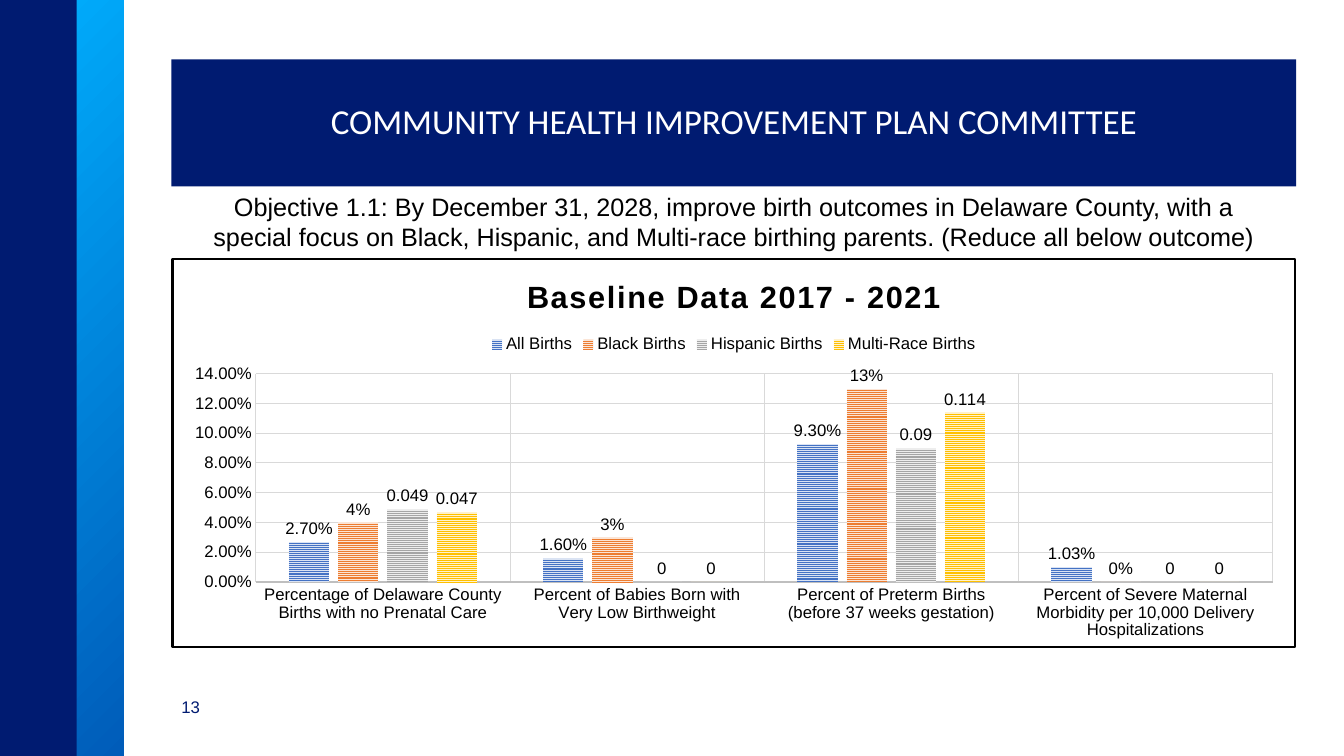
import pptx
import pptx.chart.data
import pptx.dml.color
import pptx.enum.chart
import pptx.enum.dml
import pptx.enum.shapes
import pptx.enum.text
import pptx.oxml
import pptx.util

Pt = pptx.util.Pt
RGB = pptx.dml.color.RGBColor.from_string

TITLE = "COMMUNITY HEALTH IMPROVEMENT PLAN COMMITTEE"
OBJECTIVE = ("Objective 1.1: By December 31, 2028, improve birth outcomes in Delaware County, "
             "with a special focus on Black, Hispanic, and Multi-race birthing parents. "
             "(Reduce all below outcome)")
PAGE = "13"
CHART_TITLE = "Baseline Data 2017 - 2021"
MEASURES = [
    "Percentage of Delaware County Births with no Prenatal Care",
    "Percent of Babies Born with Very Low Birthweight",
    "Percent of Preterm Births (before 37 weeks gestation)",
    "Percent of Severe Maternal Morbidity per 10,000 Delivery Hospitalizations",
]
# name, values, label format, stripe colour, ground colour
GROUPS = [
    ("All Births", (0.027, 0.016, 0.093, 0.0103), "0.00%", "4472C4", "DAE3F3"),
    ("Black Births", (0.04, 0.03, 0.13, 0), "0%", "ED7D31", "FBE5D6"),
    ("Hispanic Births", (0.049, 0, 0.09, 0), "General", "A5A5A5", "EDEDED"),
    ("Multi-Race Births", (0.047, 0, 0.114, 0), "General", "FFC000", "FFF2CC"),
]
THEME = {
    "navy": "001B71", "blue": "005CB9", "sky": "00ACFC",
    "white": "FFFFFF", "black": "000000", "grid": "D9D9D9", "axis": "BFBFBF",
    "title_font": "Calibri", "body_font": "Arial",
    "title": 25, "chart_title": 22, "body": 18, "small": 12,
}

WIDTH, HEIGHT = 960, 540
LEFT, CONTENT_W = 122.4, 803.5
BAND_W, BAND_STEP = 54.7, 33.8
TITLE_TOP, TITLE_H = 42.5, 90.7
OBJECTIVE_INSET = 18.5
CHART_TOP, CHART_H = 184.3, 278.6


def box(left, top, width, height):
    return [Pt(v) for v in (left, top, width, height)]


def set_font(font, size, color="black", name="body_font", bold=False):
    font.size = Pt(THEME[size])
    font.color.rgb = RGB(THEME[color])
    font.name = THEME[name]
    font.bold = bold


def set_line(line, color, width):
    line.color.rgb = RGB(THEME[color])
    line.width = Pt(width)


def add_band(slide, left):
    sp = slide.shapes.add_shape(pptx.enum.shapes.MSO_SHAPE.RECTANGLE,
                                *box(left, 0, BAND_W, HEIGHT))
    sp.shadow.inherit = False
    sp.line.fill.background()
    return sp


def add_side_bands(slide):
    fill = add_band(slide, BAND_STEP).fill
    fill.gradient()
    fill.gradient_angle = 135
    for stop, color, position in zip(fill.gradient_stops, ("blue", "sky"), (0, 1)):
        stop.color.rgb = RGB(THEME[color])
        stop.position = position
    fill = add_band(slide, 0).fill
    fill.solid()
    fill.fore_color.rgb = RGB(THEME["navy"])


def add_title(slide):
    sp = slide.shapes.title
    sp.left, sp.top, sp.width, sp.height = box(LEFT, TITLE_TOP, CONTENT_W, TITLE_H)
    sp.fill.solid()
    sp.fill.fore_color.rgb = RGB(THEME["navy"])
    tf = sp.text_frame
    tf.text = TITLE
    tf.vertical_anchor = pptx.enum.text.MSO_ANCHOR.MIDDLE
    p = tf.paragraphs[0]
    p.alignment = pptx.enum.text.PP_ALIGN.CENTER
    p.line_spacing = 0.9
    set_font(p.font, "title", "white", "title_font")


def add_text(slide, area, text, size, color, align):
    tf = slide.shapes.add_textbox(*area).text_frame
    tf.word_wrap = True
    tf.text = text
    p = tf.paragraphs[0]
    p.alignment = align
    set_font(p.font, size, color)


def frame_chart(chart):
    """Give the chart area a white fill and a black border."""
    sp_pr = pptx.oxml.parse_xml(
        '<c:spPr xmlns:c="http://schemas.openxmlformats.org/drawingml/2006/chart" '
        'xmlns:a="http://schemas.openxmlformats.org/drawingml/2006/main">'
        f'<a:solidFill><a:srgbClr val="{THEME["white"]}"/></a:solidFill>'
        f'<a:ln w="{Pt(1.75)}"><a:solidFill><a:srgbClr val="{THEME["black"]}"/>'
        '</a:solidFill></a:ln></c:spPr>')
    chart.element.chart.addnext(sp_pr)


def add_chart(slide):
    xl = pptx.enum.chart
    data = pptx.chart.data.CategoryChartData()
    data.categories = MEASURES
    for name, values, fmt, _, _ in GROUPS:
        data.add_series(name, values, fmt)
    chart = slide.shapes.add_chart(xl.XL_CHART_TYPE.COLUMN_CLUSTERED,
                                   *box(LEFT, CHART_TOP, CONTENT_W, CHART_H), data).chart
    set_font(chart.font, "small")
    frame_chart(chart)

    chart.has_title = True
    tf = chart.chart_title.text_frame
    tf.text = CHART_TITLE
    r = tf.paragraphs[0].runs[0]
    set_font(r.font, "chart_title", bold=True)
    r.font._element.set("spc", "130")
    chart.has_legend = True
    chart.legend.position = xl.XL_LEGEND_POSITION.TOP
    chart.legend.include_in_layout = False
    set_font(chart.legend.font, "small")

    for axis in (chart.category_axis, chart.value_axis):
        axis.has_major_gridlines = True
        set_line(axis.major_gridlines.format.line, "grid", 0.75)
        axis.major_tick_mark = axis.minor_tick_mark = xl.XL_TICK_MARK.NONE
        set_font(axis.tick_labels.font, "small")
    set_line(chart.category_axis.format.line, "axis", 1.5)
    axis = chart.value_axis
    axis.format.line.fill.background()
    axis.minimum_scale, axis.maximum_scale, axis.major_unit = 0, 0.14, 0.02
    axis.tick_labels.number_format = "0.00%"
    axis.tick_labels.number_format_is_linked = False

    plot = chart.plots[0]
    plot.vary_by_categories = False
    plot.gap_width, plot.overlap = 164, -22
    for series, (_, _, fmt, stripe, ground) in zip(plot.series, GROUPS):
        fill = series.format.fill
        fill.patterned()
        fill.pattern = pptx.enum.dml.MSO_PATTERN.NARROW_HORIZONTAL
        fill.fore_color.rgb = RGB(stripe)
        fill.back_color.rgb = RGB(ground)
        labels = series.data_labels
        labels.show_value = True
        labels.position = xl.XL_LABEL_POSITION.OUTSIDE_END
        labels.number_format = fmt
        labels.number_format_is_linked = False
        set_font(labels.font, "small")


def main():
    prs = pptx.Presentation()
    prs.slide_width, prs.slide_height = Pt(WIDTH), Pt(HEIGHT)
    slide = prs.slides.add_slide(prs.slide_layouts[5])
    align = pptx.enum.text.PP_ALIGN
    add_side_bands(slide)
    add_title(slide)
    add_text(slide, box(LEFT, 494, 40, 29), PAGE, "small", "navy", align.LEFT)
    add_text(slide, box(LEFT + OBJECTIVE_INSET, TITLE_TOP + TITLE_H,
                        CONTENT_W - 2 * OBJECTIVE_INSET, 51),
             OBJECTIVE, "body", "black", align.CENTER)
    add_chart(slide)
    prs.save("out.pptx")


if __name__ == "__main__":
    main()
